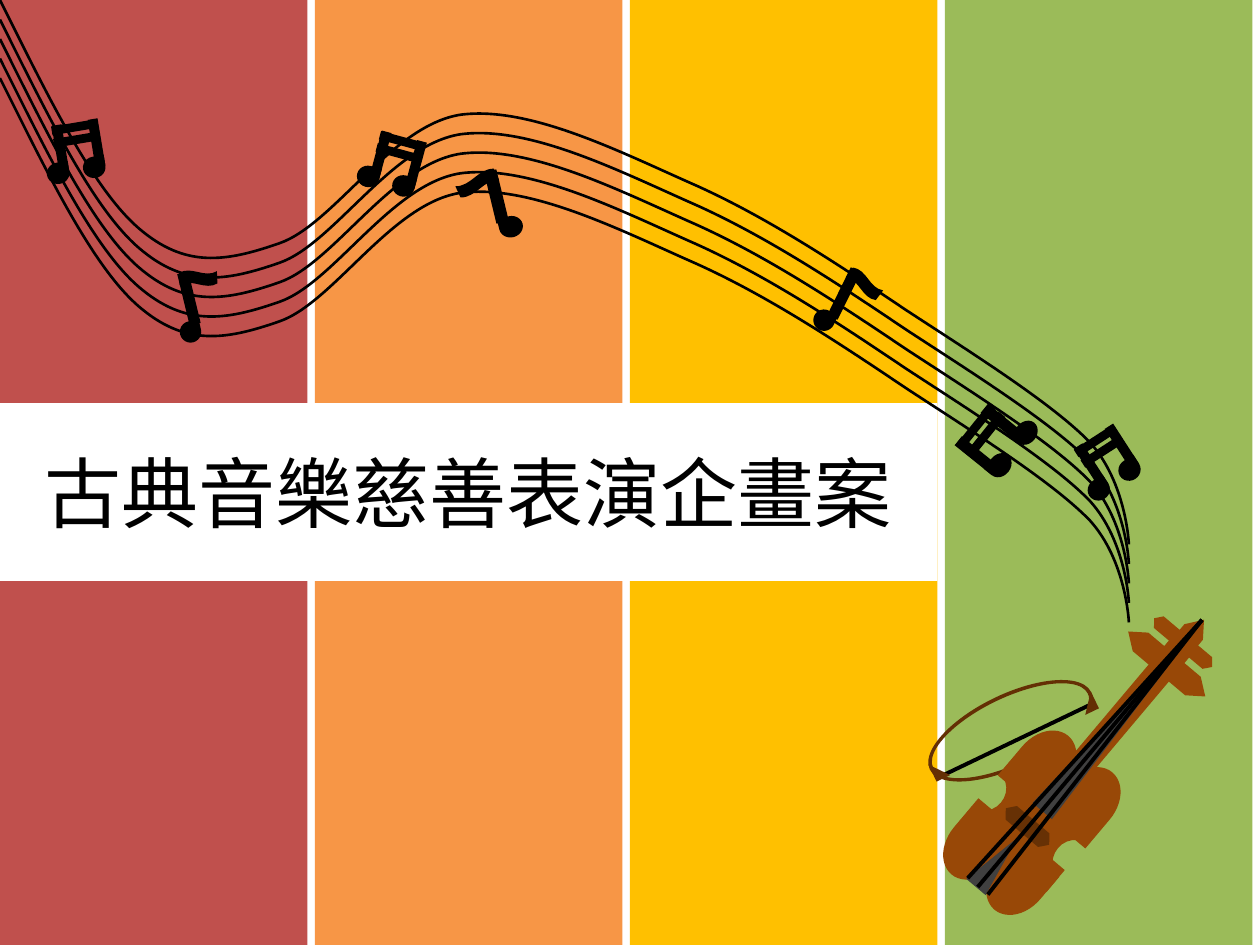
from dataclasses import dataclass
from math import cos, radians, sin

from lxml.etree import SubElement
from pptx import Presentation
from pptx.dml.color import RGBColor
from pptx.enum.shapes import MSO_CONNECTOR as Connector, MSO_SHAPE as Shape
from pptx.enum.text import MSO_ANCHOR as Anchor, MSO_AUTO_SIZE as AutoSize, PP_ALIGN as Align
from pptx.oxml.ns import qn
from pptx.util import Inches, Pt

COLUMNS, ROWS = 10, 7.5


@dataclass(frozen=True)
class Theme:
    font: str = "Noto Sans CJK SC"
    title_size: float = 44
    string_width: float = 2.25
    staff_width: float = 1.5
    ink: str = "000000"
    paper: str = "FFFFFF"
    wood: str = "984807"
    bridge: str = "673105"
    bow: str = "642F04"
    fingerboard: str = "404040"
    bands: tuple = ("C0504D", "F79646", "FFC000", "9BBB59")


class SlideBuilder:
    """Draws on one slide, with lengths in grid columns and rows."""

    def __init__(self, presentation, theme):
        self.theme = theme
        self.slide = presentation.slides.add_slide(presentation.slide_layouts[5])
        self.column = presentation.slide_width / COLUMNS
        self.row = presentation.slide_height / ROWS
        self.canvas = self.slide.shapes

    def x(self, columns):
        return round(columns * self.column)

    def y(self, rows):
        return round(rows * self.row)

    def box(self, left, top, width, height):
        return self.x(left), self.y(top), self.x(width), self.y(height)

    def start_group(self):
        self.canvas = self.slide.shapes.add_group_shape().shapes

    def paint(self, shape, color):
        shape.fill.solid()
        shape.fill.fore_color.rgb = RGBColor.from_string(color)

    def stroke(self, shape, width):
        shape.line.color.rgb = RGBColor.from_string(self.theme.ink)
        shape.line.width = Pt(width)

    def preset(self, kind, place, color, rotation=0, flip="", adjust=()):
        shape = self.canvas.add_shape(kind, *self.box(*place))
        shape.shadow.inherit = False
        self.paint(shape, color)
        shape.line.fill.background()
        shape.rotation = rotation
        for index, value in enumerate(adjust):
            shape.adjustments[index] = value
        for axis in flip:
            shape.element.spPr.xfrm.set(f"flip{axis}", "1")

    def string(self, start, end):
        ends = (self.x(start[0]), self.y(start[1]), self.x(end[0]), self.y(end[1]))
        line = self.canvas.add_connector(Connector.STRAIGHT, *ends)
        self.stroke(line, self.theme.string_width)
        SubElement(line.element.spPr, qn("a:effectLst"))

    def curve(self, points, drop):
        """Cubic curve: a start, then two controls and an end per piece."""
        start, *rest = [(self.x(x), self.y(y + drop)) for x, y in points]
        builder = self.canvas.build_freeform(*start)
        builder.add_line_segments(rest, close=False)
        shape = builder.convert_to_shape()
        outline = shape.element.spPr.find(".//" + qn("a:path"))
        segments = outline.findall(qn("a:lnTo"))
        for index in range(0, len(segments), 3):
            cubic = SubElement(outline, qn("a:cubicBezTo"))
            for segment in segments[index:index + 3]:
                cubic.append(segment[0])
                outline.remove(segment)
        shape.fill.background()
        shape.shadow.inherit = False
        self.stroke(shape, self.theme.staff_width)

    def title(self, text, place):
        title = self.slide.shapes.title
        title.left, title.top, title.width, title.height = self.box(*place)
        geometry = SubElement(title.element.spPr, qn("a:prstGeom"), prst="round1Rect")
        guides = SubElement(geometry, qn("a:avLst"))
        SubElement(guides, qn("a:gd"), name="adj", fmla="val 50000")
        self.paint(title, self.theme.paper)
        frame_format = {"text": text, "word_wrap": True, "auto_size": AutoSize.NONE,
                        "vertical_anchor": Anchor.MIDDLE}
        for name, value in frame_format.items():
            setattr(title.text_frame, name, value)
        paragraph = title.text_frame.paragraphs[0]
        paragraph.alignment = Align.CENTER
        font = paragraph.runs[0].font
        for name, value in {"name": self.theme.font, "size": Pt(self.theme.title_size)}.items():
            setattr(font, name, value)
        font.color.rgb = RGBColor.from_string(self.theme.ink)
        SubElement(paragraph.runs[0].font._element, qn("a:ea"), typeface=self.theme.font)
        # Bring the title in front of the bands
        self.slide.shapes.element.append(title.element)

    def note(self, parts, center, angle, stretch=1, mirrored=False):
        """Places the parts of a note around the centre of its first stem."""
        side = -1 if mirrored else 1
        turn = radians(angle)
        for kind, across, down, width, height, tilt in parts:
            across, width = across * side * stretch, width * stretch
            middle_x = center[0] + across * cos(turn) - down * sin(turn)
            middle_y = center[1] + across * sin(turn) + down * cos(turn)
            place = (middle_x - width / 2, middle_y - height / 2, width, height)
            self.preset(kind, place, self.theme.ink, (angle + side * tilt) % 360,
                        "H" if mirrored else "")


# Note parts: kind, offset across and down, width, height, extra tilt
BEAMED = [
    (Shape.TEAR, -0.05, 0.19, 0.18, 0.17, 0), (Shape.TEAR, 0.24, 0.19, 0.18, 0.17, 0),
    (Shape.RECTANGLE, 0, 0, 0.08, 0.38, 0), (Shape.RECTANGLE, 0.29, 0, 0.08, 0.38, 0),
    (Shape.RECTANGLE, 0.14, -0.15, 0.37, 0.07, 0), (Shape.RECTANGLE, 0.14, -0.05, 0.37, 0.07, 0),
]
SINGLE = [
    (Shape.TEAR, -0.05, 0.26, 0.17, 0.17, 0), (Shape.RECTANGLE, 0, 0, 0.09, 0.42, 0),
    (Shape.WAVE, 0.11, -0.14, 0.3, 0.13, 11),
]
NOTES = [
    (BEAMED, (8.66, 3.7), -32.8), (BEAMED, (3.02, 1.23), 15.1), (BEAMED, (0.48, 1.18), -9.4),
    (BEAMED, (7.96, 3.36), -51.2, 1.14, True),
    (SINGLE, (1.5, 2.37), -13.6), (SINGLE, (6.7, 2.33), 26.2),
    (SINGLE, (3.94, 1.56), -13.6, 1.12, True),
]
STAFF = [
    (0, 0), (0.37, 0.74), (0.73, 1.49), (1.1, 1.81), (1.47, 2.13), (1.79, 2.08), (2.22, 1.93),
    (2.65, 1.78), (3.11, 0.99), (3.66, 0.91), (4.21, 0.84), (4.93, 1.21), (5.52, 1.47),
    (6.1, 1.73), (6.67, 2.11), (7.19, 2.46), (7.71, 2.8), (8.35, 3.2), (8.65, 3.51),
    (8.94, 3.83), (8.96, 4.32), (8.96, 4.32),
]
STAFF_LINES, STAFF_GAP = 5, 0.155


def draw_bow(builder):
    color = builder.theme.bow
    builder.string((8.66, 5.59), (7.47, 6.16))
    builder.preset(Shape.BLOCK_ARC, (7.31, 5.51, 1.42, 0.58), color, 334.4,
                   adjust=(64.13, 4.8, 0.05))
    builder.preset(Shape.RIGHT_TRIANGLE, (8.56, 5.52, 0.15, 0.12), color, 244.4)
    builder.preset(Shape.RIGHT_TRIANGLE, (7.38, 6.05, 0.15, 0.12), color, 244.4, "V")


def draw_violin(builder):
    theme, lean = builder.theme, 40.1
    peg = (1, 0.4)
    # Body, neck and scroll, then fingerboard, tailpiece and bridge
    parts = [
        (Shape.RECTANGLE, (7.96, 6.27, 0.45, 0.51), theme.wood, lean),
        (Shape.LEFT_RIGHT_ARROW, (9.09, 5.04, 0.6, 0.12), theme.wood, lean, "", peg),
        (Shape.TEAR, (7.86, 6.69, 0.45, 0.6), theme.wood, lean),
        (Shape.TEAR, (7.52, 6.41, 0.45, 0.6), theme.wood, lean, "H"),
        (Shape.TEAR, (8.06, 5.77, 0.45, 0.6), theme.wood, lean, "HV"),
        (Shape.TEAR, (8.41, 6.06, 0.45, 0.6), theme.wood, lean, "V"),
        (Shape.BLOCK_ARC, (7.5, 5.96, 0.65, 0.62), theme.wood, lean + 90),
        (Shape.BLOCK_ARC, (8.19, 6.52, 0.65, 0.62), theme.wood, lean + 90, "V"),
        (Shape.RECTANGLE, (8.55, 4.88, 0.21, 2.21), theme.wood, lean),
        (Shape.QUAD_ARROW, (8.86, 4.81, 0.8, 0.92), theme.wood, lean, "", (0.25, 0.12, 0.16)),
        (Shape.ISOSCELES_TRIANGLE, (8.81, 4.69, 0.2, 1.98), theme.fingerboard, lean),
        (Shape.ISOSCELES_TRIANGLE, (7.81, 6.59, 0.2, 0.51), theme.fingerboard, lean),
        (Shape.LEFT_RIGHT_ARROW, (7.93, 6.49, 0.45, 0.14), theme.bridge, lean, "", peg),
    ]
    for part in parts:
        builder.preset(*part)
    for tail in ((7.68, 6.97), (7.84, 7.1), (7.76, 7.04)):
        builder.string((9.54, 4.92), tail)


def main():
    presentation = Presentation()
    presentation.slide_width, presentation.slide_height = Inches(COLUMNS), Inches(ROWS)
    theme = Theme()
    builder = SlideBuilder(presentation, theme)

    # Colour bands and title
    for index, color in enumerate(theme.bands):
        builder.preset(Shape.RECTANGLE, (2.5 * index, -0.02, 2.44, 7.52), color)
    builder.title("古典音樂慈善表演企畫案", (0, 3.2, 7.44, 1.41))

    # Violin with its bow
    builder.start_group()
    draw_bow(builder)
    draw_violin(builder)

    # Staff and notes
    builder.start_group()
    for line in reversed(range(STAFF_LINES)):
        builder.curve(STAFF, line * STAFF_GAP)
    for note in NOTES:
        builder.note(*note)

    presentation.save("out.pptx")


if __name__ == "__main__":
    main()
